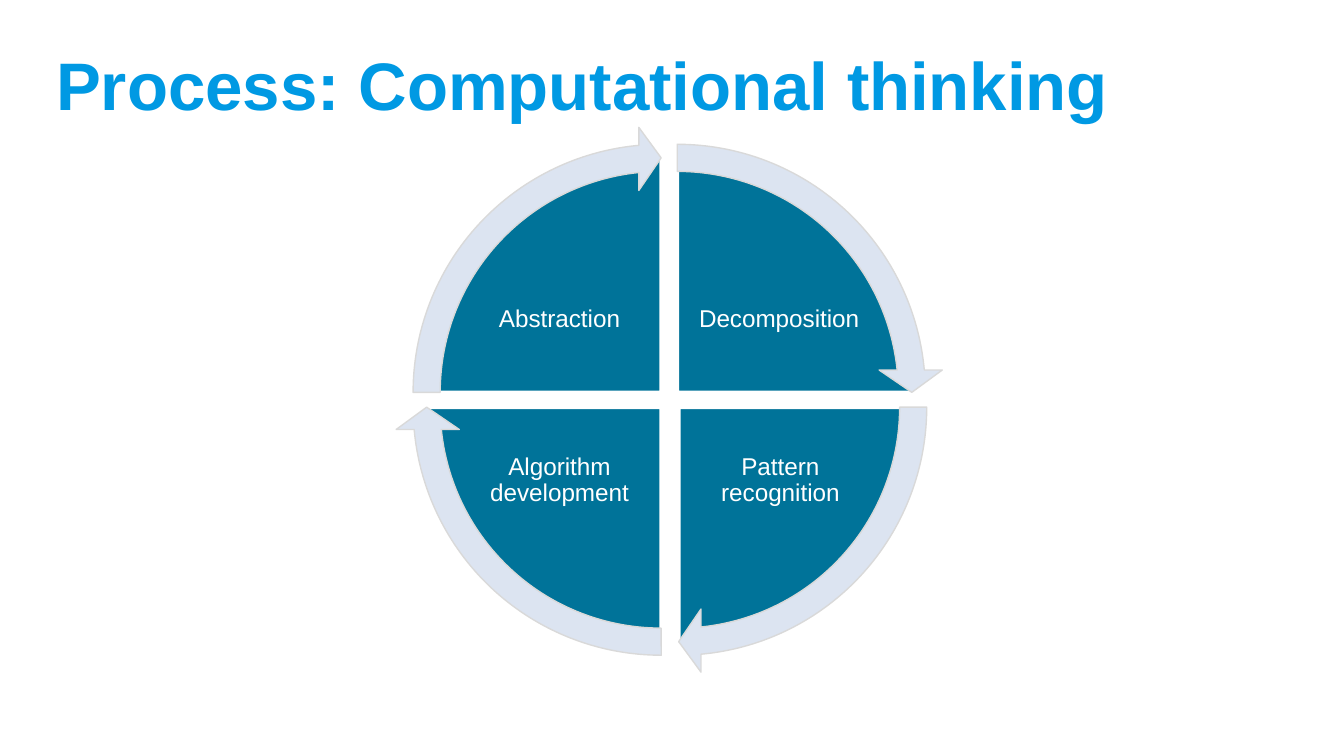
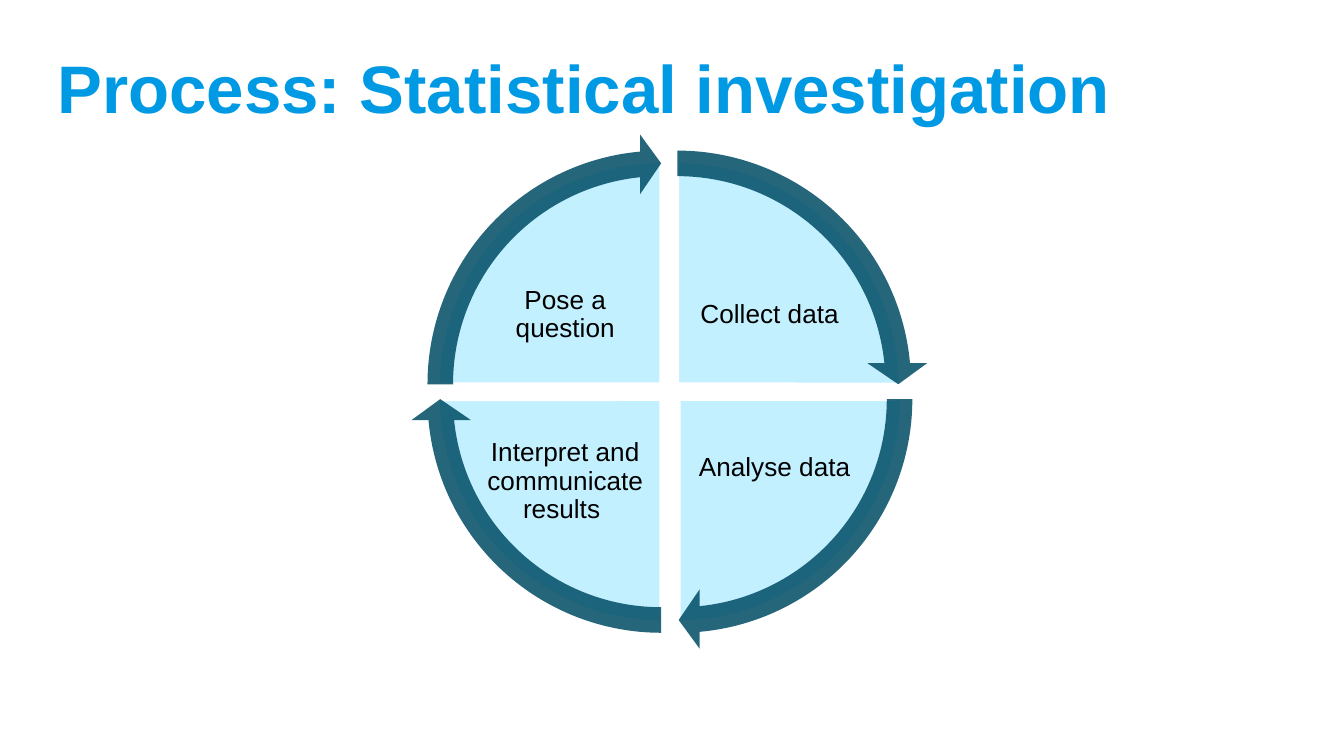
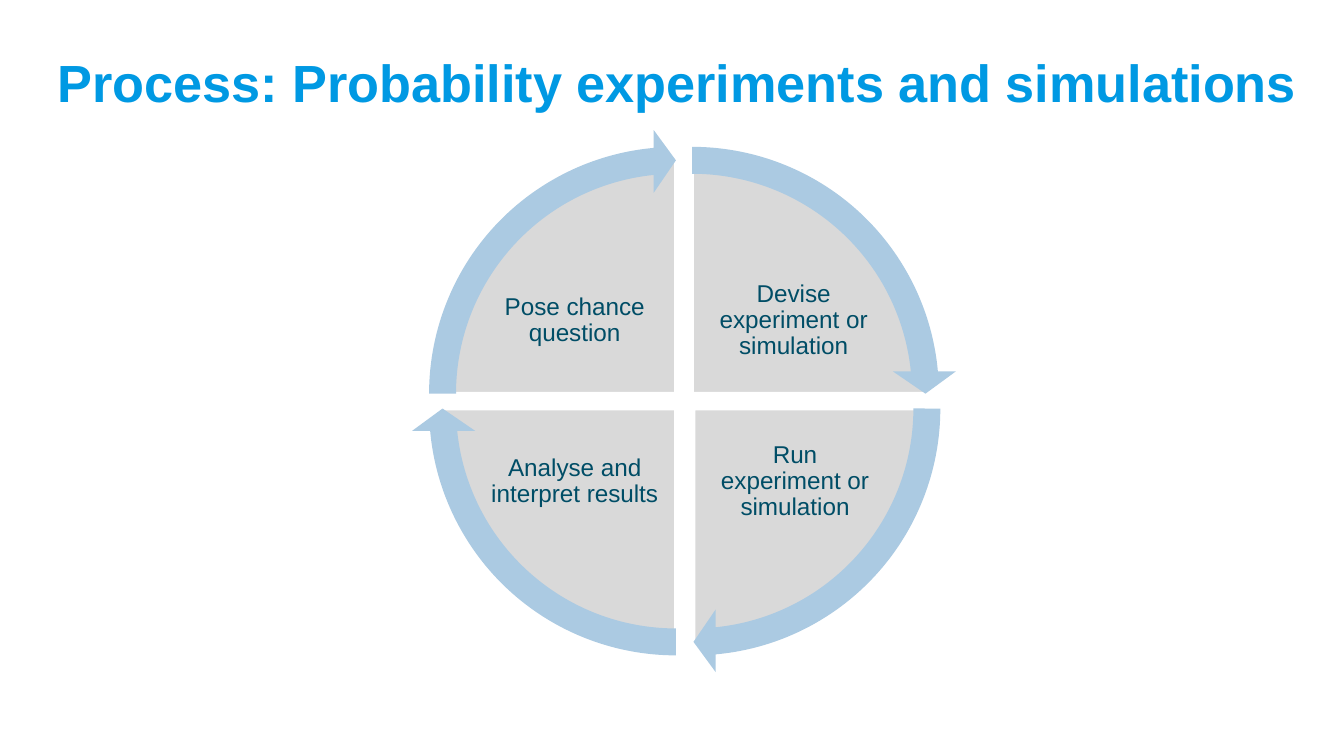
from lxml import etree
from pptx import Presentation
from pptx import util as u
from pptx.dml.color import RGBColor
from pptx.enum import shapes, text
from pptx.oxml.ns import qn

COLORS = {
    "title": "0099E3", "white": "FFFFFF", "black": "000000",
    "teal": "007399", "deep teal": "004D66", "dark teal": "004C64",
    "ice": "C2F0FF", "mist": "DCE4F1", "gray": "D9D9D9", "sky": "ABCAE2",
}
FONT = "Arial"

# Quadrants clockwise from the top right: side of the hub, then gap to it
QUADRANTS = [
    ((1, -1), (0.06, -0.05)),
    ((1, 1), (0.07, 0.06)),
    ((-1, 1), (-0.06, 0.06)),
    ((-1, -1), (-0.06, -0.05)),
]
# Angles in the unit of the shape adjustments (0.6 to a degree)
FULL_TURN, QUARTER, TOP = 216, 54, 162
ARROW_SWEEP, ARROW_HEAD = 50.72, 3.28
ARROW_WIDTH, HEAD_WIDTH = 5.09 / 100, 5.93 / 100

CYCLES = [
    dict(title="Process: Computational thinking", title_at=(0.32, 0.33), title_size=36,
         hub=(4.98, 2.97), wedge=3.52, first_wedge=(3.55, 3.58), ring=3.96,
         fill="teal", ink="white", size=13, arrow="mist", arrow_line="gray",
         steps=["Decomposition", "Pattern recognition",
                "Algorithm development", "Abstraction"]),
    dict(title="Process: Statistical investigation", title_at=(0.33, 0.35), title_size=36,
         hub=(4.98, 2.91), wedge=3.32, ring=3.73,
         fill="ice", ink="black", size=14, arrow="dark teal", opacity=85,
         steps=["Collect data ", "Analyse data",
                "Interpret and communicate results ", "Pose a question"],
         lowered={"Interpret and communicate results ": 0.2}),
    dict(title="Process: Probability experiments and simulations",
         title_at=(0.33, 0.31), title_size=28,
         hub=(5.09, 2.98), wedge=3.51, ring=3.94,
         fill="gray", ink="deep teal", size=13, arrow="sky",
         steps=["Devise experiment or simulation", "Run experiment or simulation",
                "Analyse and interpret results", "Pose chance question"]),
]


def rgb(name):
    return RGBColor.from_string(COLORS[name])


class Deck:
    def __init__(self):
        self.prs = Presentation()
        self.prs.slide_width = u.Inches(10)
        self.prs.slide_height = u.Inches(10 * 9 / 16)
        self.slide = None

    def new_slide(self):
        self.slide = self.prs.slides.add_slide(self.prs.slide_layouts[6])

    def words(self, content, left, top, width, height, size, color, bold=False):
        box = self.slide.shapes.add_textbox(*map(u.Inches, (left, top, width, height)))
        frame = box.text_frame
        frame.word_wrap = True
        frame.vertical_anchor = text.MSO_ANCHOR.MIDDLE
        frame.text = content
        font = frame.paragraphs[0].runs[0].font
        font.name, font.size, font.bold = FONT, u.Pt(size), bold
        font.color.rgb = rgb(color)
        return frame

    def title(self, content, at, size):
        self.words(content, *at, 9.53, 0.59, size, "title", bold=True)

    def label(self, content, center, radius, size, color, drop=0):
        width, height = 0.74 * radius, 0.55 * radius
        frame = self.words(content, center[0] - width / 2, center[1] - height / 2,
                           width, height, size, color)
        frame.margin_left = frame.margin_right = frame.margin_bottom = u.Inches(0.02)
        frame.margin_top = u.Inches(0.02 + drop)
        frame.paragraphs[0].alignment = text.PP_ALIGN.CENTER
        frame.paragraphs[0].line_spacing = 0.9

    def round_shape(self, kind, center, width, height, adjustments, fill,
                    line=None, line_width=0.75, opacity=100):
        shape = self.slide.shapes.add_shape(
            kind, u.Inches(center[0] - width / 2), u.Inches(center[1] - height / 2),
            u.Inches(width), u.Inches(height))
        shape.shadow.inherit = False
        for i, value in enumerate(adjustments):
            shape.adjustments[i] = value
        shape.fill.solid()
        shape.fill.fore_color.rgb = rgb(fill)
        if opacity < 100:
            color = shape.fill._xPr.find(".//" + qn("a:srgbClr"))
            etree.SubElement(color, qn("a:alpha"), val=str(opacity * 1000))
        if line:
            shape.line.color.rgb = rgb(line)
            shape.line.width = u.Pt(line_width)
        else:
            shape.line.fill.background()

    def wedge(self, center, width, height, start, fill):
        self.round_shape(shapes.MSO_SHAPE.PIE, center, width, height,
                         (start, (start + QUARTER) % FULL_TURN), fill, "white", 2)

    def arrow(self, center, diameter, start, fill, line, opacity):
        self.round_shape(
            shapes.MSO_SHAPE.CIRCULAR_ARROW, center, diameter, diameter,
            (ARROW_WIDTH, ARROW_HEAD, start + ARROW_SWEEP, start, HEAD_WIDTH),
            fill, line, opacity=opacity)

    def cycle(self, c):
        radius = c["wedge"] / 2
        centers = [(c["hub"][0] + dx, c["hub"][1] + dy) for _, (dx, dy) in QUADRANTS]
        starts = [(TOP + i * QUARTER) % FULL_TURN for i in range(len(QUADRANTS))]
        sizes = [(c["wedge"], c["wedge"])] * len(QUADRANTS)
        sizes[0] = c.get("first_wedge", sizes[0])

        # Wedges with their steps
        for step, (side, _), (x, y), start, extent in zip(
                c["steps"], QUADRANTS, centers, starts, sizes):
            self.wedge((x, y), *extent, start, c["fill"])
            self.label(step, (x + side[0] * 0.43 * radius, y + side[1] * 0.31 * radius),
                       radius, c["size"], c["ink"], c.get("lowered", {}).get(step, 0))

        # Arrows around the wedges
        for center, start in zip(centers, starts):
            self.arrow(center, c["ring"], start, c["arrow"],
                       c.get("arrow_line"), c.get("opacity", 100))


def main():
    deck = Deck()
    for process in CYCLES:
        deck.new_slide()
        deck.title(process["title"], process["title_at"], process["title_size"])
        deck.cycle(process)
    deck.prs.save("out.pptx")


if __name__ == "__main__":
    main()
